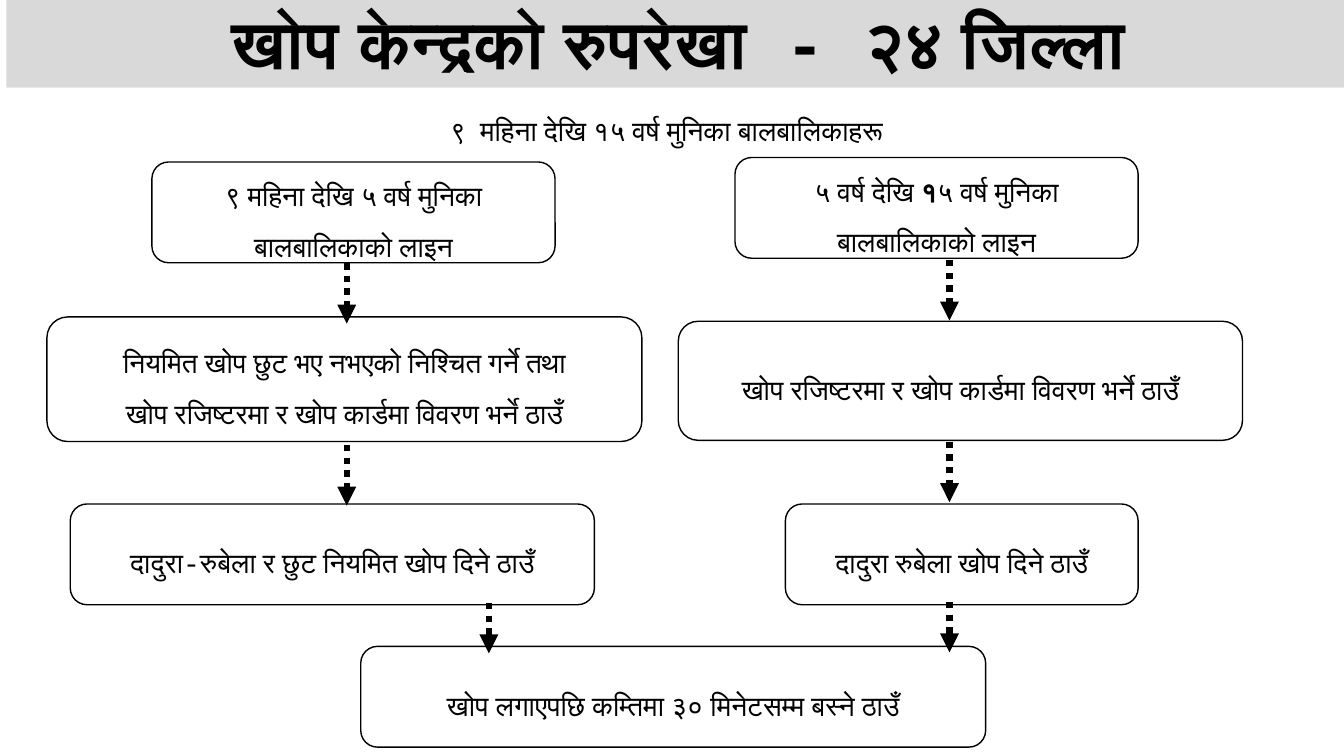
from dataclasses import dataclass

from lxml import etree
from pptx import Presentation
from pptx.dml.color import RGBColor
from pptx.enum.dml import MSO_LINE
from pptx.enum.shapes import MSO_CONNECTOR, MSO_SHAPE
from pptx.enum.text import MSO_ANCHOR, PP_ALIGN
from pptx.oxml.ns import qn
from pptx.util import Pt

RECTANGLE = MSO_SHAPE.RECTANGLE
ROUNDED = MSO_SHAPE.ROUNDED_RECTANGLE
STRAIGHT = MSO_CONNECTOR.STRAIGHT
DOTTED = MSO_LINE.ROUND_DOT
CENTER = PP_ALIGN.CENTER
TOP, MIDDLE = MSO_ANCHOR.TOP, MSO_ANCHOR.MIDDLE


@dataclass(frozen=True)
class Theme:
    font: str = "Courier New"
    ink: RGBColor = RGBColor(0, 0, 0)
    paper: RGBColor = RGBColor(255, 255, 255)
    band: RGBColor = RGBColor(0xD9, 0xD9, 0xD9)
    title_size: float = 48
    body_size: float = 20
    body_spacing: float = 1.5
    box_line: float = 1
    arrow_line: float = 4.5


class FlowSlide:
    def __init__(self, slide, theme):
        self.slide = slide
        self.theme = theme

    def add_text(self, frame, paragraphs, size, spacing, anchor):
        """Fill a frame; each paragraph is a list of (text, bold) runs."""
        frame.word_wrap = True
        frame.vertical_anchor = anchor
        for index, runs in enumerate(paragraphs):
            paragraph = frame.paragraphs[0] if index == 0 else frame.add_paragraph()
            paragraph.alignment = CENTER
            paragraph.line_spacing = spacing
            for text, bold in runs:
                run = paragraph.add_run()
                run.text = text
                run.font.name = self.theme.font
                run.font.size = Pt(size)
                run.font.bold = bold
                run.font.color.rgb = self.theme.ink

    def panel(self, kind, bounds, fill):
        panel = self.slide.shapes.add_shape(kind, *map(Pt, bounds))
        panel.shadow.inherit = False
        panel.fill.solid()
        panel.fill.fore_color.rgb = fill
        return panel

    def title(self, text, bounds):
        band = self.panel(RECTANGLE, bounds, self.theme.band)
        band.line.fill.background()
        self.add_text(band.text_frame, [[(text, True)]], self.theme.title_size, 1.0, TOP)

    def caption(self, text, bounds):
        caption = self.slide.shapes.add_textbox(*map(Pt, bounds))
        self.add_text(caption.text_frame, [[(text, False)]], self.theme.body_size,
                      self.theme.body_spacing, TOP)

    def step(self, paragraphs, bounds):
        box = self.panel(ROUNDED, bounds, self.theme.paper)
        box.line.color.rgb = self.theme.ink
        box.line.width = Pt(self.theme.box_line)
        self.add_text(box.text_frame, paragraphs, self.theme.body_size,
                      self.theme.body_spacing, MIDDLE)

    def down_arrow(self, x, top, length):
        arrow = self.slide.shapes.add_connector(
            STRAIGHT, Pt(x), Pt(top), Pt(x), Pt(top + length))
        arrow.line.color.rgb = self.theme.ink
        arrow.line.width = Pt(self.theme.arrow_line)
        arrow.line.dash_style = DOTTED
        properties = arrow._element.spPr
        etree.SubElement(properties.find(qn("a:ln")), qn("a:tailEnd"), type="triangle")
        etree.SubElement(properties, qn("a:effectLst"))


REGISTER = "खोप रजिष्टरमा र खोप कार्डमा विवरण भर्ने ठाउँ"

STEPS = [
    ([[("९ महिना देखि ५ वर्ष मुनिका बालबालिकाको लाइन", False)]],
     (108.5, 115.7, 288, 72)),
    ([[("५ वर्ष देखि ", False), ("१", True),
       ("५ वर्ष मुनिका बालबालिकाको लाइन", False)]],
     (525, 112.5, 288, 72)),
    ([[("नियमित खोप छुट भए नभएको निश्चित गर्ने तथा", False)], [(REGISTER, False)]],
     (33.5, 226.4, 425, 89)),
    ([[(REGISTER, False)]], (484.5, 229.5, 403, 85)),
    ([[("दादुरा-रुबेला र छुट नियमित खोप दिने ठाउँ", False)]],
     (50.2, 360, 374.4, 72)),
    ([[("दादुरा रुबेला खोप दिने ठाउँ", False)]], (561, 360, 252, 72)),
    ([[("खोप लगाएपछि कम्तिमा ३० मिनेटसम्म बस्ने ठाउँ", False)]],
     (257.7, 461.7, 446.4, 72)),
]

LEFT_X, RIGHT_X, MERGE_X = 247.7, 678.2, 349.2
STEP_GAP, MERGE_GAP = 43.2, 36
ARROWS = [
    (LEFT_X, 188, STEP_GAP),
    (RIGHT_X, 185.7, STEP_GAP),
    (LEFT_X, 318, STEP_GAP),
    (RIGHT_X, 315.5, STEP_GAP),
    (RIGHT_X, 430, MERGE_GAP),
    (MERGE_X, 430.7, MERGE_GAP),
]


def main():
    deck = Presentation()
    deck.slide_width, deck.slide_height = Pt(960), Pt(540)
    flow = FlowSlide(deck.slides.add_slide(deck.slide_layouts[6]), Theme())
    flow.title("खोप केन्द्रको रुपरेखा  - २४ जिल्ला", (4.5, -2.3, 960, 65))
    for paragraphs, bounds in STEPS:
        flow.step(paragraphs, bounds)
    for x, top, length in ARROWS:
        flow.down_arrow(x, top, length)
    flow.caption("९  महिना देखि १५ वर्ष मुनिका बालबालिकाहरू", (260, 65.5, 432, 40.3))
    deck.save("out.pptx")


if __name__ == "__main__":
    main()
